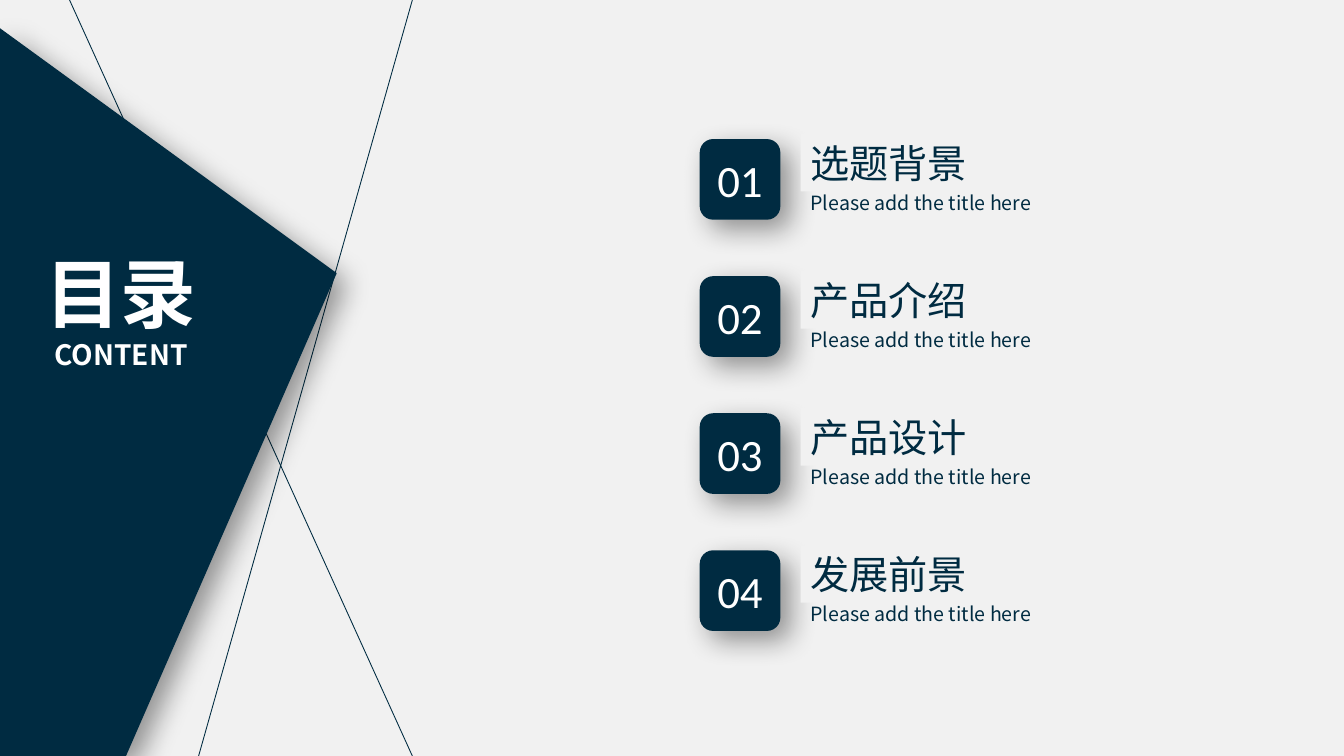
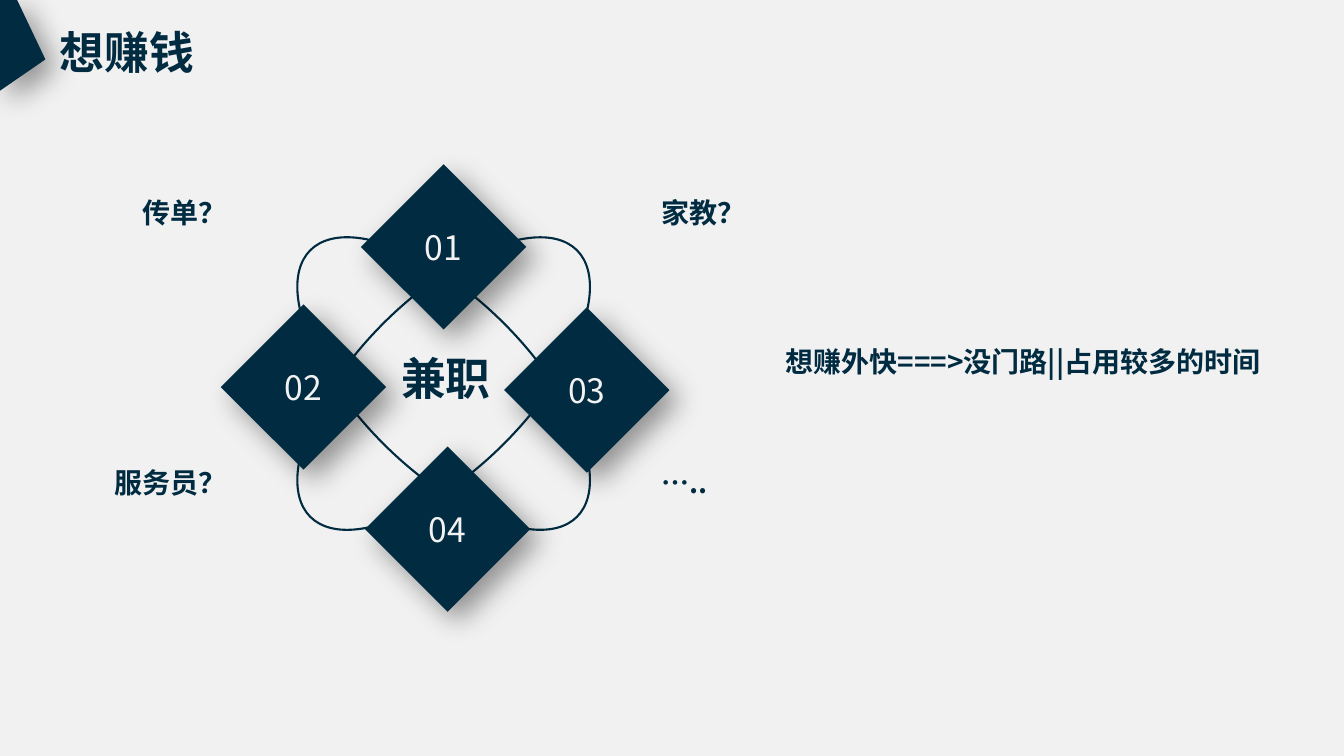
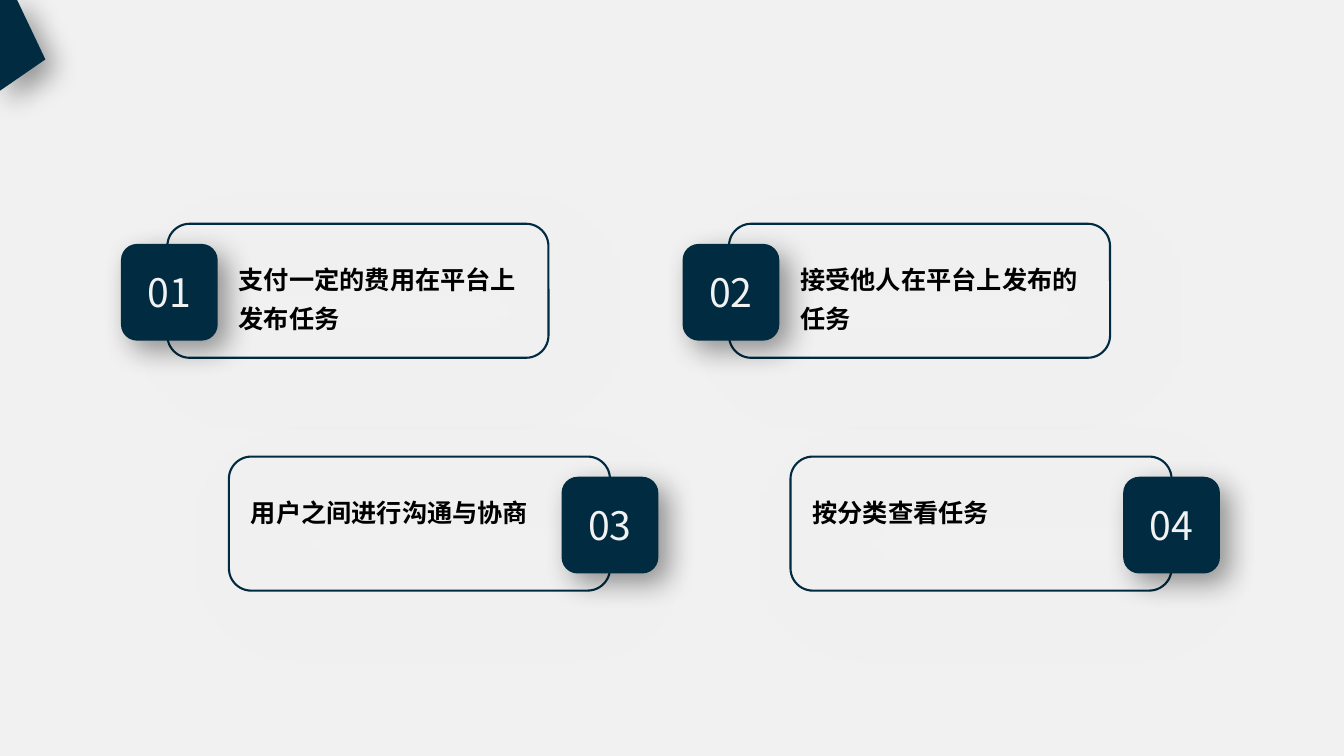
from dataclasses import dataclass, replace

from lxml import etree
from pptx import Presentation
from pptx.dml.color import RGBColor
from pptx.enum.shapes import MSO_CONNECTOR, MSO_SHAPE
from pptx.enum.text import MSO_ANCHOR, MSO_AUTO_SIZE, PP_ALIGN
from pptx.oxml.ns import qn
from pptx.util import Inches, Pt

ROUNDED = MSO_SHAPE.ROUNDED_RECTANGLE
DIAMOND = MSO_SHAPE.FLOWCHART_DECISION
OVAL = MSO_SHAPE.OVAL
RECT = MSO_SHAPE.RECTANGLE
STRAIGHT = MSO_CONNECTOR.STRAIGHT
LEFT, CENTER, RIGHT = PP_ALIGN.LEFT, PP_ALIGN.CENTER, PP_ALIGN.RIGHT
TOP, MIDDLE = MSO_ANCHOR.TOP, MSO_ANCHOR.MIDDLE
NO_AUTOFIT = MSO_AUTO_SIZE.NONE

NAVY, PAPER, WHITE, SOFT_WHITE = "002B41", "F1F1F1", "FFFFFF", "F2F2F2"
BLACK, GRAY = "000000", "808080"
CJK, LATIN = "Noto Sans CJK SC", "Calibri"
TITLE_ONLY, BLANK = 5, 6


@dataclass(frozen=True)
class Box:
    left: float
    top: float
    width: float
    height: float

    def emu(self) -> list[int]:
        return [Inches(v) for v in (self.left, self.top, self.width, self.height)]


@dataclass(frozen=True)
class TextStyle:
    size: float
    color: str = NAVY
    bold: bool = False
    font: str = CJK
    align: PP_ALIGN = LEFT
    anchor: MSO_ANCHOR = TOP
    spacing: float = 1.0


@dataclass(frozen=True)
class Shadow:
    color: str
    opacity: int
    blur: float
    distance: float
    angle: int = 45


@dataclass(frozen=True)
class Label:
    text: str
    left: float
    top: float
    align: PP_ALIGN


@dataclass(frozen=True)
class Card:
    number: str
    text: str
    left: float
    top: float
    badge_dx: float
    text_dx: float


DEEP = Shadow(BLACK, 40, 20, 10)
FAINT = Shadow(GRAY, 20, 50, 20)
HEADING = TextStyle(32, bold=True)
LABEL = TextStyle(20, bold=True)
NUMBER = TextStyle(24, SOFT_WHITE, align=CENTER, anchor=MIDDLE)


def rgb(color: str) -> RGBColor:
    return RGBColor.from_string(color)


def write(tf, text: str, style: TextStyle) -> None:
    tf.word_wrap = True
    tf.auto_size = NO_AUTOFIT
    tf.vertical_anchor = style.anchor
    tf.text = text
    for p in tf.paragraphs:
        p.alignment = style.align
        p.line_spacing = style.spacing
        p.font.size = Pt(style.size)
        p.font.bold = style.bold
        p.font.color.rgb = rgb(style.color)
        p.font.name = style.font
        etree.SubElement(p._p.pPr.find(qn("a:defRPr")), qn("a:ea"), typeface=CJK)


def format_shape(sp, fill: str | None, line: str | None = None,
                 shadow: Shadow | None = None) -> None:
    if fill:
        sp.fill.solid()
        sp.fill.fore_color.rgb = rgb(fill)
    else:
        sp.fill.background()
    if line:
        sp.line.color.rgb = rgb(line)
        sp.line.width = Pt(1.5)
    else:
        sp.line.fill.background()
    sp.shadow.inherit = False
    if shadow:
        effects = sp._element.spPr.find(qn("a:effectLst"))
        outer = etree.SubElement(
            effects, qn("a:outerShdw"), blurRad=str(Pt(shadow.blur)),
            dist=str(Pt(shadow.distance)), dir=str(shadow.angle * 60000),
            algn="tl", rotWithShape="0")
        color = etree.SubElement(outer, qn("a:srgbClr"), val=shadow.color)
        etree.SubElement(color, qn("a:alpha"), val=str(shadow.opacity * 1000))


def add_shape(s, kind: MSO_SHAPE, box: Box, fill: str | None = None,
              line: str | None = None, shadow: Shadow | None = None):
    sp = s.shapes.add_shape(kind, *box.emu())
    format_shape(sp, fill, line, shadow)
    return sp


def add_text(s, box: Box, text: str, style: TextStyle) -> None:
    write(s.shapes.add_textbox(*box.emu()).text_frame, text, style)


def add_number(s, kind: MSO_SHAPE, box: Box, number: str, style: TextStyle) -> None:
    sp = add_shape(s, kind, box, NAVY, shadow=DEEP)
    write(sp.text_frame, number, style)


def add_polygon(s, points: list[tuple[float, float]]) -> None:
    corners = [(Inches(x), Inches(y)) for x, y in points]
    builder = s.shapes.build_freeform(*corners[0])
    builder.add_line_segments(corners[1:], close=True)
    format_shape(builder.convert_to_shape(), NAVY, shadow=DEEP)


def add_line(s, x1: float, y1: float, x2: float, y2: float) -> None:
    c = s.shapes.add_connector(STRAIGHT, *[Inches(v) for v in (x1, y1, x2, y2)])
    c.line.color.rgb = rgb(NAVY)
    c.line.width = Pt(0.63)
    etree.SubElement(c._element.spPr, qn("a:effectLst"))


def set_title(s, box: Box, text: str, style: TextStyle):
    title = s.shapes.title
    title.left, title.top, title.width, title.height = box.emu()
    write(title.text_frame, text, style)
    s.shapes._spTree.append(title._element)
    return title.text_frame


def add_slide(prs, layout: int):
    return prs.slides.add_slide(prs.slide_layouts[layout])


def add_corner(s) -> None:
    add_polygon(s, [(0.17, 0), (0, 0), (0, 0.9), (0.45, 0.59)])


def build_contents(prs) -> None:
    s = add_slide(prs, TITLE_ONLY)
    add_line(s, 4.09, 0, 1.97, 7.5)
    add_line(s, 4.09, 7.5, 0.69, 0)
    add_polygon(s, [(1.25, 7.5), (0, 7.5), (0, 0.28), (3.34, 2.71)])
    tf = set_title(s, Box(0.24, 2.4, 1.92, 1.35), "目录\nCONTENT",
                   TextStyle(54, WHITE, True, align=CENTER))
    tf.paragraphs[1].font.size = Pt(20)

    number = replace(NUMBER, size=32, color=WHITE, font=LATIN)
    for i, topic in enumerate(["选题背景", "产品介绍", "产品设计", "发展前景"]):
        top = 1.38 + 1.36 * i
        add_number(s, ROUNDED, Box(6.94, top, 0.8, 0.8), f"{i + 1:02d}", number)
        add_text(s, Box(7.94, top + 0.46, 2.48, 0.34),
                 "Please add the title here", TextStyle(14))
        sp = add_shape(s, RECT, Box(7.94, top - 0.05, 3.17, 0.57), PAPER)
        write(sp.text_frame, topic, TextStyle(28))


def build_part_time(prs) -> None:
    s = add_slide(prs, TITLE_ONLY)
    add_corner(s)
    set_title(s, Box(0.49, 0.19, 2.44, 0.64), "想赚钱", HEADING)

    for angle in (45, 135):
        sp = add_shape(s, OVAL, Box(2.53, 2.96, 3.74, 1.69), line=NAVY)
        sp.rotation = angle
    diamonds = [(3.58, 1.63), (2.19, 3.02), (5, 3.05), (3.62, 4.43)]
    for i, (left, top) in enumerate(diamonds, 1):
        add_number(s, DIAMOND, Box(left, top, 1.64, 1.64), f"{i:02d}", NUMBER)

    labels = [
        Label("传单？", 0.45, 1.89, RIGHT),
        Label("家教？", 6.46, 1.89, LEFT),
        Label("服务员？", 0.45, 4.57, RIGHT),
        Label("…..", 6.46, 4.57, LEFT),
    ]
    for label in labels:
        add_text(s, Box(label.left, label.top, 1.9, 0.44), label.text,
                 replace(LABEL, align=label.align))
    add_text(s, Box(3.88, 3.43, 2.44, 0.64), "兼职", HEADING)
    add_text(s, Box(7.69, 3.27, 5.2, 0.54), "想赚外快===>没门路||占用较多的时间",
             replace(LABEL, spacing=1.3))


def add_card(s, card: Card) -> None:
    add_shape(s, ROUNDED, Box(card.left, card.top, 3.78, 1.33),
              line=NAVY, shadow=FAINT)
    add_number(s, ROUNDED, Box(card.left + card.badge_dx, card.top + 0.2, 0.96, 0.96),
               card.number, replace(NUMBER, size=28))
    add_text(s, Box(card.left + card.text_dx, card.top + 0.26, 3.06, 0.85),
             card.text, TextStyle(18, BLACK, True, LATIN, spacing=1.3))


def build_features(prs) -> None:
    s = add_slide(prs, BLANK)
    add_corner(s)
    rows = [
        (1.66, 2.22, -0.46, 0.61,
         ["支付一定的费用在平台上发布任务", "接受他人在平台上发布的任务"]),
        (2.27, 4.53, 3.3, 0.12,
         ["用户之间进行沟通与协商", "按分类查看任务"]),
    ]
    for row, (left, top, badge_dx, text_dx, texts) in enumerate(rows):
        for col, text in enumerate(texts):
            add_card(s, Card(f"{row * 2 + col + 1:02d}", text,
                             left + 5.57 * col, top, badge_dx, text_dx))


def main() -> None:
    prs = Presentation()
    prs.slide_width, prs.slide_height = Inches(13.33), Inches(7.5)
    fill = prs.slide_master.background.fill
    fill.solid()
    fill.fore_color.rgb = rgb(PAPER)
    build_contents(prs)
    build_part_time(prs)
    build_features(prs)
    prs.save("out.pptx")


if __name__ == "__main__":
    main()
